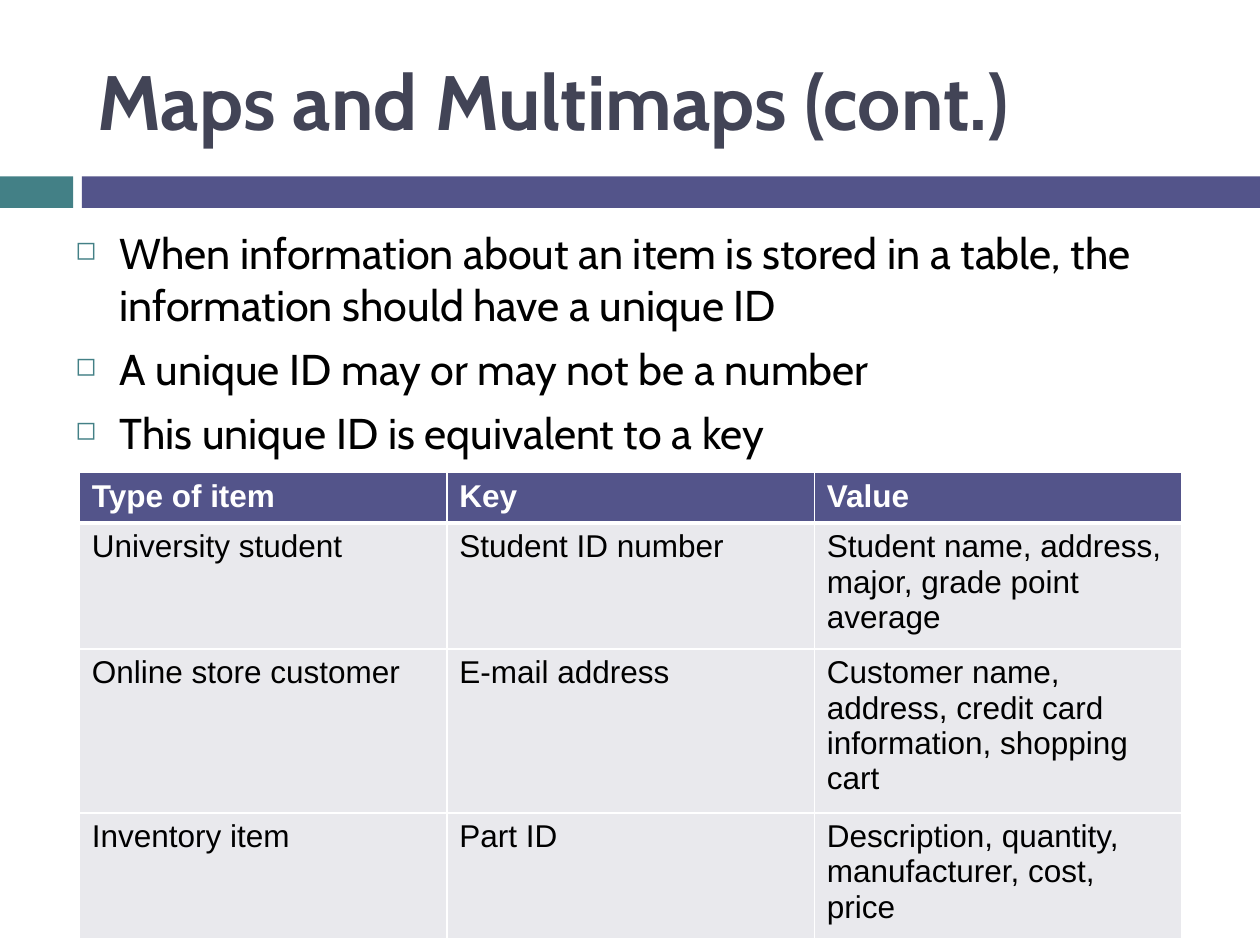
from lxml import etree
from pptx import Presentation
from pptx.dml.color import RGBColor
from pptx.enum import shapes, text
from pptx.oxml import ns
from pptx.util import Inches, Pt

COLORS = {
    "title": "424456", "teal": "438086", "indigo": "53548A",
    "row": "E9E9ED", "white": "FFFFFF", "black": "000000",
}
BULLETS = [
    "When information about an item is stored in a table, "
    "the information should have a unique ID",
    "A unique ID may or may not be a number",
    "This unique ID is equivalent to a key",
]
ITEMS = [
    ["Type of item", "Key", "Value"],
    ["University student", "Student ID number",
     "Student name, address, major, grade point average"],
    ["Online store customer", "E-mail address",
     "Customer name, address, credit card information, shopping cart"],
    ["Inventory item", "Part ID",
     "Description, quantity, manufacturer, cost, price"],
]


def color(name):
    return RGBColor.from_string(COLORS[name])


def add_element(parent, tag, **attributes):
    return etree.SubElement(parent, ns.qn(tag), attributes)


def format_runs(paragraph, font_name, size, color_name, bold=False):
    for run in paragraph.runs:
        run.font.name = font_name
        run.font.size = Pt(size)
        run.font.bold = bold
        run.font.color.rgb = color(color_name)


def place_title(slide, left, top, width, height):
    title = slide.shapes.title
    title.left, title.top, title.width, title.height = left, top, width, height
    frame = title.text_frame
    frame.text = "Maps and Multimaps (cont.)"
    frame.auto_size = text.MSO_AUTO_SIZE.NONE
    frame.vertical_anchor = text.MSO_ANCHOR.MIDDLE
    paragraph = frame.paragraphs[0]
    paragraph.alignment = text.PP_ALIGN.LEFT
    format_runs(paragraph, "Cabin", 44, "title", bold=True)


def add_band(slide, left, top, width, height):
    # Short teal block, a gap, then the long indigo bar
    block, bar_start = Inches(0.58), Inches(0.65)
    parts = [(left, block, "teal"),
             (left + bar_start, width - bar_start, "indigo")]
    for part_left, part_width, fill in parts:
        shape = slide.shapes.add_shape(
            shapes.MSO_SHAPE.RECTANGLE, part_left, top, part_width, height)
        shape.shadow.inherit = False
        shape.fill.solid()
        shape.fill.fore_color.rgb = color(fill)
        shape.line.fill.background()


def add_bullets(slide, left, top, width, height):
    frame = slide.shapes.add_textbox(left, top, width, height).text_frame
    frame.word_wrap = True
    frame.text = "\n".join(BULLETS)
    indent = Inches(0.35)
    for paragraph in frame.paragraphs:
        paragraph.space_before = Pt(7)
        format_runs(paragraph, "Cabin", 24.6, "black")
        properties = paragraph._p.get_or_add_pPr()
        properties.set("marL", str(indent))
        properties.set("indent", str(-indent))
        bullet_color = add_element(properties, "a:buClr")
        add_element(bullet_color, "a:srgbClr", val=COLORS["teal"])
        add_element(properties, "a:buSzPct", val="60000")
        add_element(properties, "a:buChar", char="◻")


def set_borders(cell, top, bottom):
    properties = cell._tc.get_or_add_tcPr()
    sides = [("a:lnL", 1), ("a:lnR", 1), ("a:lnT", top), ("a:lnB", bottom)]
    for tag, points in sides:
        line = add_element(properties, tag, w=str(Pt(points)))
        fill = add_element(line, "a:solidFill")
        add_element(fill, "a:srgbClr", val=COLORS["white"])


def add_items_table(slide, left, top, width, height):
    table = slide.shapes.add_table(
        len(ITEMS), len(ITEMS[0]), left, top, width, height).table
    for row, row_height in zip(table.rows, (0.37, 1, 1.22, 1)):
        row.height = Inches(row_height)
    for r, values in enumerate(ITEMS):
        header = r == 0
        for c, value in enumerate(values):
            cell = table.cell(r, c)
            cell.text_frame.text = value
            format_runs(cell.text_frame.paragraphs[0], "Arial", 18,
                        "white" if header else "black", bold=header)
            # A thick rule parts the header from the rows
            set_borders(cell, top=3 if r == 1 else 1, bottom=3 if header else 1)
            cell.fill.solid()
            cell.fill.fore_color.rgb = color("indigo" if header else "row")


def main():
    presentation = Presentation()
    presentation.slide_width = Inches(10)
    presentation.slide_height = Inches(7.5)
    slide = presentation.slides.add_slide(presentation.slide_layouts[5])
    add_band(slide, 0, Inches(1.4), presentation.slide_width, Inches(0.25))
    place_title(slide, Inches(0.67), Inches(0.25), Inches(8.92), Inches(1.08))
    add_bullets(slide, Inches(0.5), Inches(1.75), Inches(9), Inches(1.75))
    add_items_table(slide, Inches(0.63), Inches(3.75), Inches(8.75), Inches(3.59))
    presentation.save("out.pptx")


if __name__ == "__main__":
    main()
